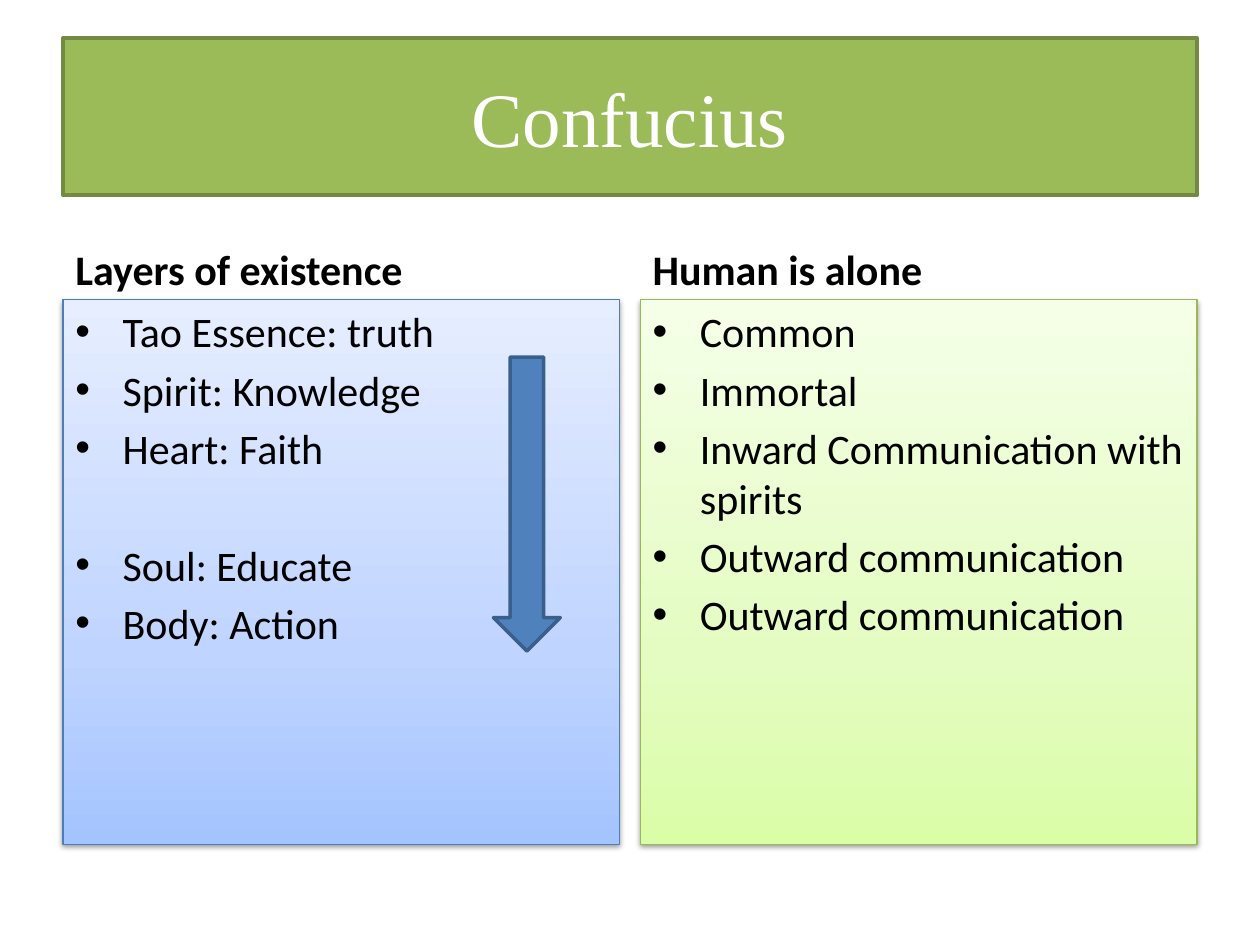
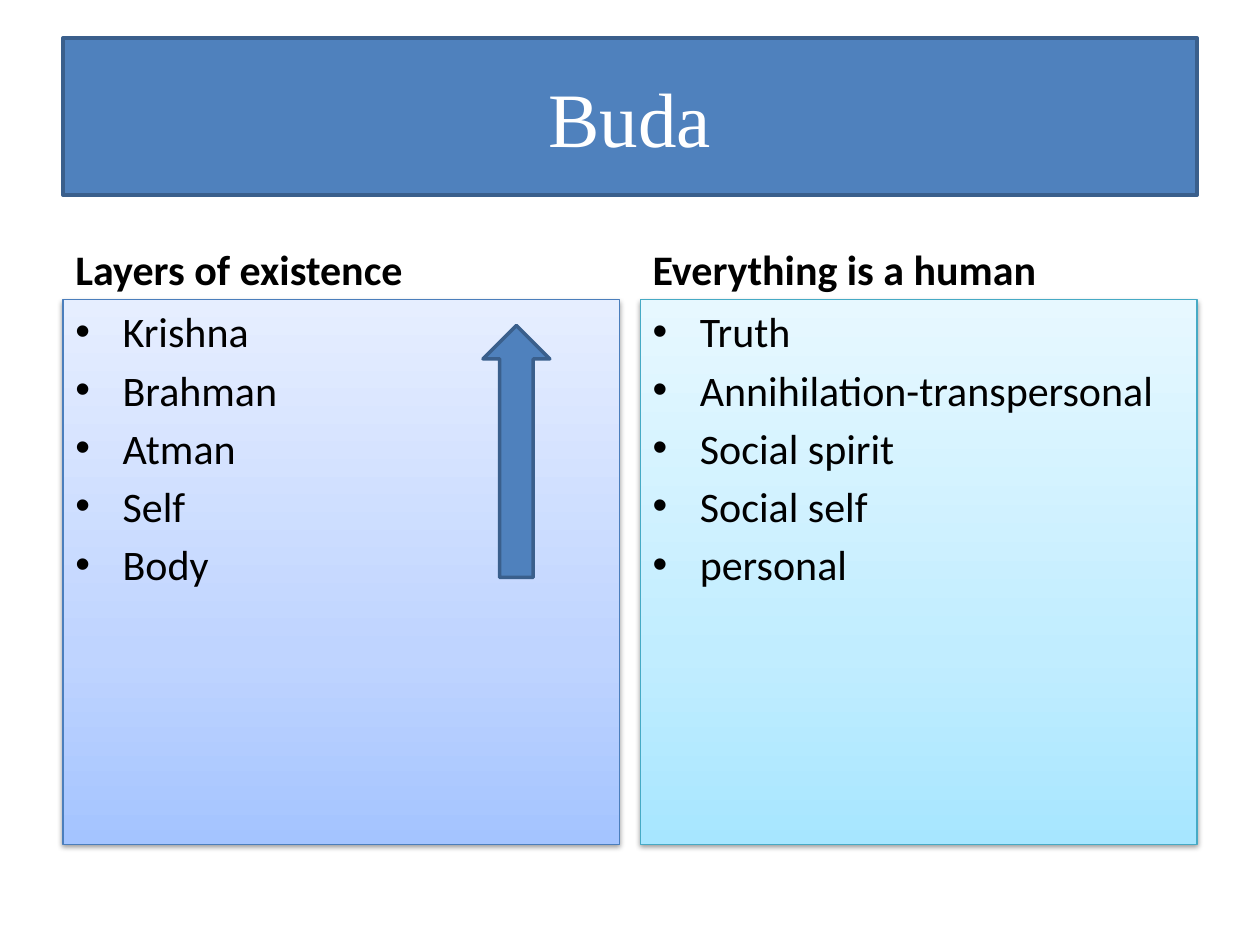
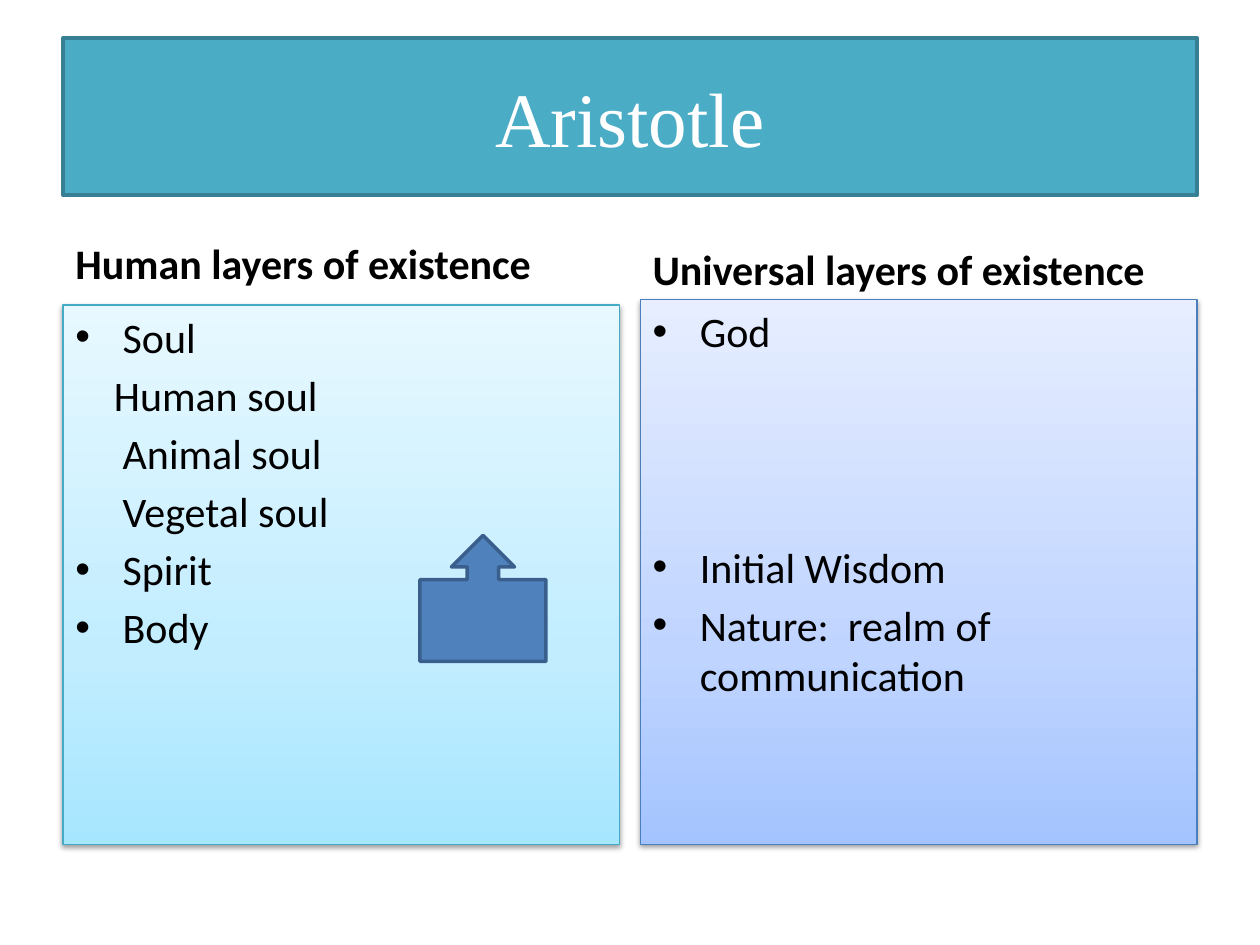
from copy import deepcopy
from dataclasses import dataclass

from lxml import etree
from pptx import Presentation
from pptx.dml.color import RGBColor
from pptx.enum.shapes import MSO_SHAPE
from pptx.enum.text import MSO_ANCHOR, PP_ALIGN
from pptx.oxml.ns import qn
from pptx.util import Pt

RECT = MSO_SHAPE.RECTANGLE
DOWN, UP = MSO_SHAPE.DOWN_ARROW, MSO_SHAPE.UP_ARROW
CALLOUT = MSO_SHAPE.UP_ARROW_CALLOUT
TOP, MIDDLE, BOTTOM = MSO_ANCHOR.TOP, MSO_ANCHOR.MIDDLE, MSO_ANCHOR.BOTTOM
LEFT, CENTER = PP_ALIGN.LEFT, PP_ALIGN.CENTER
TITLE_ONLY = 5


@dataclass(frozen=True)
class Theme:
    """Colours, fonts and type sizes."""
    head: str = "Times New Roman"
    body: str = "Calibri"
    big: int = 44
    text: int = 24
    white: str = "FFFFFF"
    black: str = "000000"
    # Solid tones: fill and edge
    green: tuple = ("9BBB59", "738A42")
    blue: tuple = ("4F81BD", "3A5F8C")
    teal: tuple = ("4BACC6", "377F92")
    # Soft tones: three stops from the foot up, and edge
    lime: tuple = ("DAFDA7", "E4FCC2", "F5FFE7", "98B955")
    sky: tuple = ("A4C4FF", "BFD4FF", "E6EEFF", "4B7EBC")
    aqua: tuple = ("A7E6FF", "C1EDFF", "E7F8FF", "46AAC5")


@dataclass(frozen=True)
class Item:
    """A list line: blank rows above it, and its indent if it has no bullet."""
    text: str
    skip: int = 0
    plain: float = 0


THEME = Theme()

# Page grid, in points
WIDE, HIGH = 720, 540
EDGE, GAP = 36, 11.6
SPAN = WIDE - 2 * EDGE
COL = (SPAN - GAP) / 2
BAND_Y, BAND_H = 21.6, 90
HEAD_Y, HEAD_H = 121, 50.3
CARD_Y, CARD_END = 171.3, 482.4
INDENT, SPACE, ROW = 27, 4.4, 33.7


def put(thing, **vals):
    for name, val in vals.items():
        setattr(thing, name, val)


def box(x, y, w, h):
    return dict(left=Pt(x), top=Pt(y), width=Pt(w), height=Pt(h))


class Deck:
    def __init__(self, theme):
        self.theme = theme
        self.show = Presentation()
        put(self.show, slide_width=Pt(WIDE), slide_height=Pt(HIGH))
        self.slide = None

    # Formatting
    def paint(self, shape, tone, width):
        fill, edge = tone
        shape.fill.solid()
        shape.fill.fore_color.rgb = RGBColor.from_string(fill)
        self.edge(shape, edge, width)

    def edge(self, shape, color, width):
        shape.line.color.rgb = RGBColor.from_string(color)
        shape.line.width = Pt(width)

    def fade(self, shape, colors):
        shape.fill.gradient()
        shape.fill.gradient_angle = 90
        stops = shape._element.spPr.find(".//" + qn("a:gsLst"))
        stops.append(deepcopy(stops[-1]))
        for stop, spot, color in zip(shape.fill.gradient_stops, (0, 0.35, 1), colors):
            stop.position = spot
            stop.color.rgb = RGBColor.from_string(color)

    def shade(self, shape):
        shape.shadow.inherit = False
        effects = shape._element.spPr.find(qn("a:effectLst"))
        drop = etree.SubElement(effects, qn("a:outerShdw"), blurRad=str(Pt(3.1)),
                                dist=str(Pt(1.6)), dir="5400000", rotWithShape="0")
        color = etree.SubElement(drop, qn("a:srgbClr"), val=self.theme.black)
        etree.SubElement(color, qn("a:alpha"), val="38000")

    def words(self, para, text, color, **font):
        run = para.add_run()
        run.text = text
        put(run.font, **font)
        run.font.color.rgb = RGBColor.from_string(color)

    def bullet(self, para, item):
        props = para._p.get_or_add_pPr()
        left, first = (item.plain, 0) if item.plain else (INDENT, -INDENT)
        props.set("marL", str(Pt(left)))
        props.set("indent", str(Pt(first)))
        if not item.plain:
            etree.SubElement(props, qn("a:buFont"), typeface="Arial")
            etree.SubElement(props, qn("a:buChar"), char="•")

    # Elements
    def page(self, name, tone):
        self.slide = self.show.slides.add_slide(self.show.slide_layouts[TITLE_ONLY])
        title = self.slide.shapes.title
        put(title, **box(EDGE, BAND_Y, SPAN, BAND_H))
        self.paint(title, tone, 2)
        title.text_frame.vertical_anchor = MIDDLE
        para = title.text_frame.paragraphs[0]
        para.alignment = CENTER
        self.words(para, name, self.theme.white, name=self.theme.head, size=Pt(self.theme.big))

    def label(self, x, y, text):
        area = self.slide.shapes.add_textbox(**box(x, y, COL, HEAD_H))
        put(area.text_frame, word_wrap=True, vertical_anchor=BOTTOM)
        para = area.text_frame.paragraphs[0]
        para.space_before = Pt(SPACE)
        self.words(para, text, self.theme.black, name=self.theme.body,
                   size=Pt(self.theme.text), bold=True)

    def card(self, x, y, tone, items):
        *colors, edge = tone
        shape = self.slide.shapes.add_shape(RECT, **box(x, y, COL, CARD_END - y))
        self.fade(shape, colors)
        self.edge(shape, edge, 0.75)
        self.shade(shape)
        frame = shape.text_frame
        put(frame, word_wrap=True, vertical_anchor=TOP)
        for i, item in enumerate(items):
            item = Item(item) if isinstance(item, str) else item
            para = frame.add_paragraph() if i else frame.paragraphs[0]
            put(para, alignment=LEFT, space_before=Pt(SPACE + item.skip * ROW))
            self.bullet(para, item)
            self.words(para, item.text, self.theme.black, name=self.theme.body,
                       size=Pt(self.theme.text))

    def column(self, side, head, tone, items, shift=0):
        """Shift moves the heading up and the card's top edge down."""
        x = EDGE + side * (COL + GAP)
        self.label(x, HEAD_Y - shift, head)
        self.card(x, CARD_Y + shift, tone, items)

    def arrow(self, kind, x, y, w, h):
        shape = self.slide.shapes.add_shape(kind, **box(x, y, w, h))
        shape.shadow.inherit = False
        self.paint(shape, self.theme.blue, 2)


def main():
    deck = Deck(THEME)

    # Confucius
    deck.page("Confucius", THEME.green)
    deck.column(0, "Layers of existence", THEME.sky, [
        "Tao Essence: truth", "Spirit: Knowledge", "Heart: Faith",
        Item("Soul: Educate", skip=1), "Body: Action"])
    deck.column(1, "Human is alone", THEME.lime, [
        "Common", "Immortal", "Inward Communication with spirits",
        "Outward communication", "Outward communication"])
    deck.arrow(DOWN, 282, 204, 38.2, 168)

    # Buda
    deck.page("Buda", THEME.blue)
    deck.column(0, "Layers of existence", THEME.sky, [
        "Krishna", "Brahman", "Atman", "Self", "Body"])
    deck.column(1, "Everything is a human", THEME.aqua, [
        "Truth", "Annihilation-transpersonal", "Social spirit", "Social self", "personal"])
    deck.arrow(UP, 276, 186, 38.2, 144)

    # Aristotle
    deck.page("Aristotle", THEME.teal)
    deck.column(0, "Human layers of existence", THEME.aqua, [
        "Soul", Item("Human soul", plain=22), Item("Animal soul", plain=INDENT),
        Item("Vegetal soul", plain=INDENT), "Spirit", "Body"], shift=3)
    deck.column(1, "Universal layers of existence", THEME.sky, [
        "God", Item("Initial Wisdom", skip=3), "Nature:  realm of communication"])
    deck.arrow(CALLOUT, 240, 306, 72, 72)

    deck.show.save("out.pptx")


if __name__ == "__main__":
    main()
